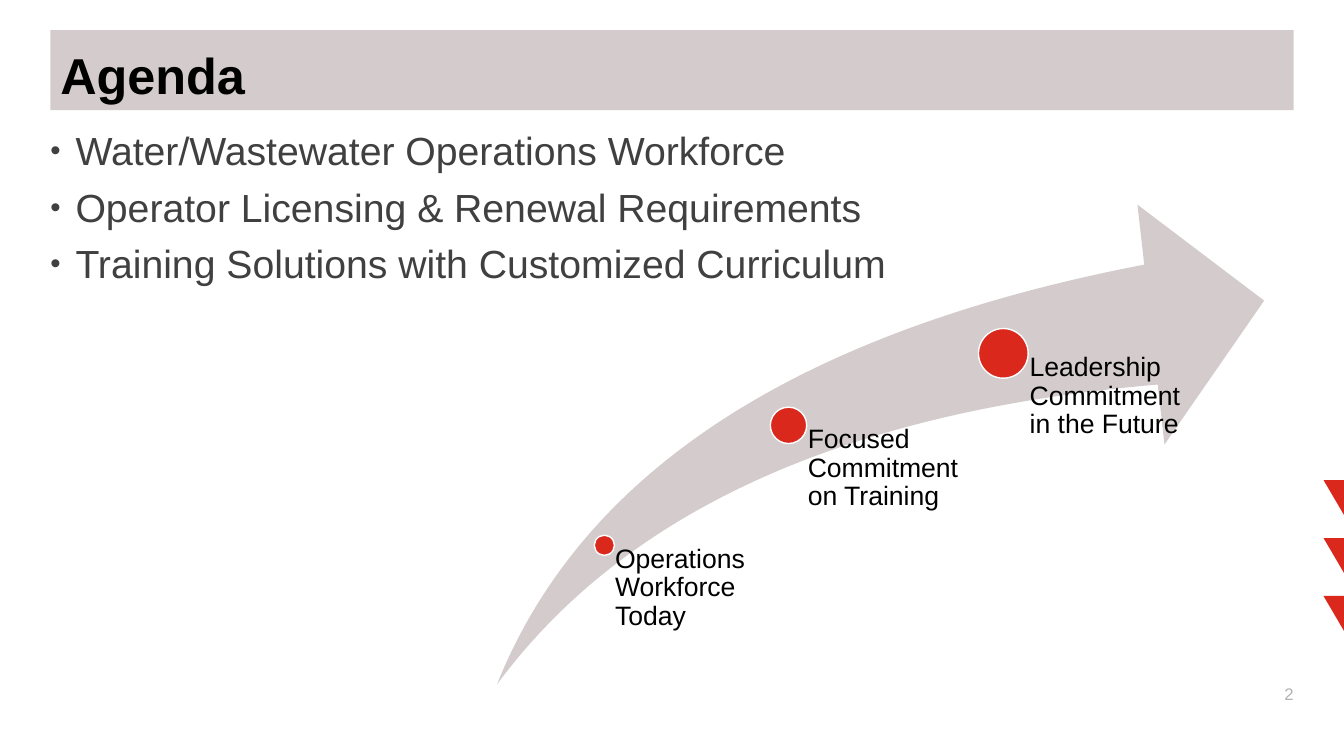
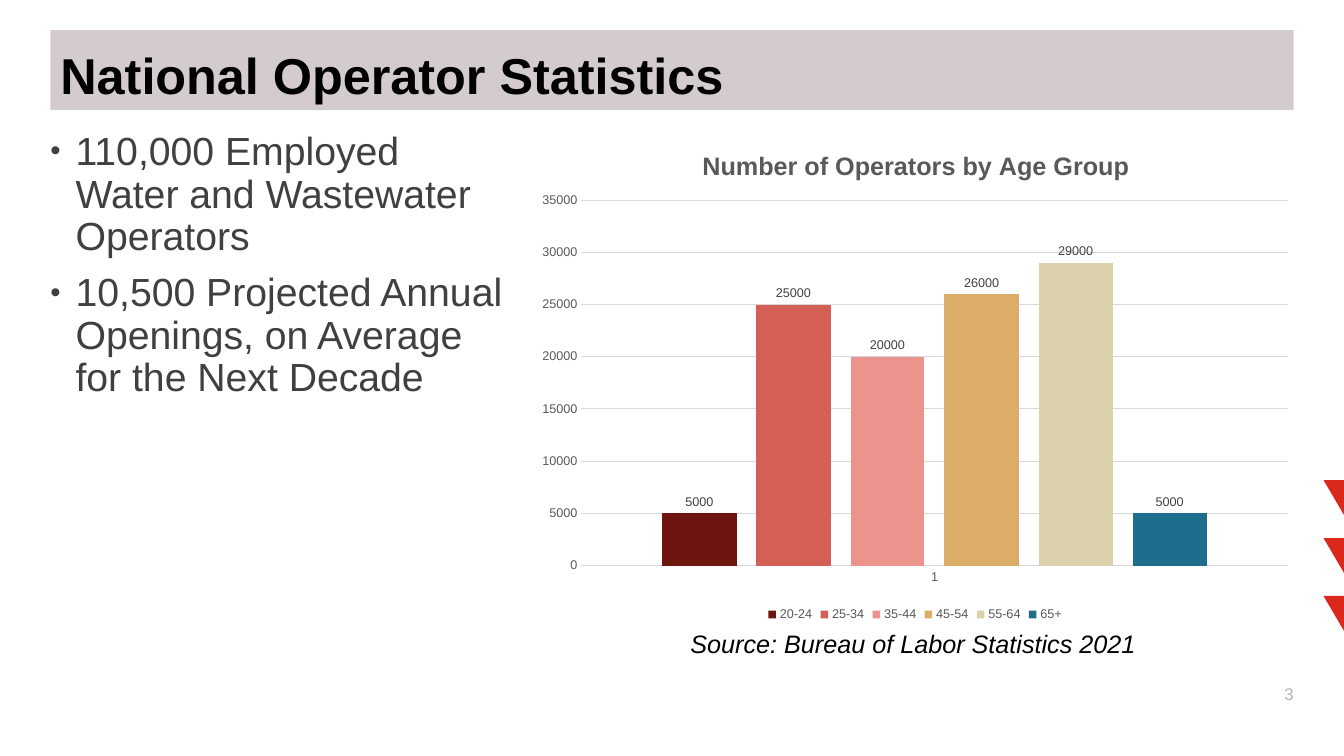
from lxml.etree import SubElement
from pptx import Presentation
from pptx.chart.data import CategoryChartData
from pptx.dml.color import RGBColor
from pptx.enum.chart import XL_CHART_TYPE, XL_LABEL_POSITION, XL_LEGEND_POSITION, XL_TICK_MARK
from pptx.enum.shapes import MSO_SHAPE
from pptx.enum.text import MSO_ANCHOR, PP_ALIGN
from pptx.oxml.ns import qn
from pptx.util import Pt

RED = RGBColor(0xDA, 0x28, 0x1C)
STONE = RGBColor(0xD4, 0xCC, 0xCC)
WHITE = RGBColor(0xFF, 0xFF, 0xFF)
BLACK = RGBColor(0x00, 0x00, 0x00)
BODY_GREY = RGBColor(0x40, 0x40, 0x40)
CHART_GREY = RGBColor(0x59, 0x59, 0x59)
NUMBER_GREY = RGBColor(0xB3, 0xB3, 0xB3)
GRID_GREY = RGBColor(0xD9, 0xD9, 0xD9)

FONT = "Arial"
TITLE_FONT = {"size": Pt(36), "bold": True}
BODY_FONT = {"size": Pt(28)}
NUMBER_FONT = {"size": Pt(12)}
STEP_FONT = {"size": Pt(19)}
SOURCE_FONT = {"size": Pt(18), "italic": True}
CHART_TITLE_FONT = {"size": Pt(18), "bold": True}
CHART_FONT = {"size": Pt(9), "bold": False}
TIGHT = {"line_spacing": 0.9, "alignment": PP_ALIGN.LEFT}
FLUSH = {"margin_left": 0, "margin_top": 0, "margin_right": 0, "margin_bottom": 0}

TITLE_BOX = (36, 21.6, 888, 57)
NUMBER_BOX = (821.5, 474.5, 102.5, 28.8)
TRIANGLES_BOX = (945.4, 342.9, 29.5, 108)
AGENDA_BOX = (36, 94.3, 883.5, 368.6)
STATISTICS_BOX = (36, 94.3, 327.6, 368.6)
ROADMAP_BOX = (355, 146.2, 548, 342.7)
CHART_BOX = (376.5, 89.3, 554.4, 357.8)
SOURCE_BOX = (486, 445, 351.4, 51)

AGENDA = [
    "Water/Wastewater Operations Workforce",
    "Operator Licensing & Renewal Requirements",
    "Training Solutions with Customized Curriculum",
]
STATISTICS = [
    "110,000 Employed Water and Wastewater Operators",
    "10,500 Projected Annual Openings, on Average for the Next Decade",
]
STEPS = [
    ("Operations Workforce Today", 0.14, 0.71, 14.4, 127.5),
    ("Focused Commitment on Training", 0.38, 0.46, 26, 131.8),
    ("Leadership Commitment in the Future", 0.66, 0.31, 35.5, 131.8),
]
AGE_GROUPS = [
    ("20-24", 5000, RGBColor(0x6D, 0x15, 0x0E)),
    ("25-34", 25000, RGBColor(0xD3, 0x5F, 0x55)),
    ("35-44", 20000, RGBColor(0xED, 0x93, 0x8E)),
    ("45-54", 26000, RGBColor(0xDB, 0xAD, 0x69)),
    ("55-64", 29000, RGBColor(0xDB, 0xD2, 0xAD)),
    ("65+", 5000, RGBColor(0x1C, 0x6E, 0x8C)),
]


def apply(target, formats):
    """Set every attribute named in a dict of format values."""
    for name, value in formats.items():
        setattr(target, name, value)


def style_font(font, formats, color):
    """Give a font the deck typeface, its formats and its colour."""
    apply(font, {"name": FONT, **formats})
    font.color.rgb = color


def points(box):
    """Turn a box of plain numbers into point lengths."""
    return [Pt(length) for length in box]


def add_filled(slide, preset, box, fill, outline=None):
    """Add a flat preset shape with an optional thin outline."""
    shape = slide.shapes.add_shape(preset, *points(box))
    shape.shadow.inherit = False
    shape.fill.solid()
    shape.fill.fore_color.rgb = fill
    if outline is None:
        shape.line.fill.background()
    else:
        shape.line.color.rgb = outline
        shape.line.width = Pt(1)
    return shape


def write(frame, text, font, color, frame_formats, paragraph_formats):
    """Fill a text frame with one formatted paragraph."""
    apply(frame, {"word_wrap": True, **frame_formats})
    paragraph = frame.paragraphs[0]
    paragraph.text = text
    apply(paragraph, paragraph_formats)
    style_font(paragraph.runs[0].font, font, color)


def add_text(slide, box, *content):
    """Add a text box holding one formatted paragraph."""
    write(slide.shapes.add_textbox(*points(box)).text_frame, *content)


def add_triangles(slide, box):
    """Stack three downward triangles at equal gaps in the box."""
    left, top, width, height = box
    size = 25.2
    step = (height - size) / 2
    for row in range(3):
        triangle = add_filled(slide, MSO_SHAPE.ISOSCELES_TRIANGLE,
                              (left, top + row * step, width, size), RED)
        triangle.rotation = 180


def add_page(deck, title, number):
    """Add a slide with the shared triangles, title band and number."""
    slide = deck.slides.add_slide(deck.slide_layouts[6])
    add_triangles(slide, TRIANGLES_BOX)
    band = add_filled(slide, MSO_SHAPE.RECTANGLE, TITLE_BOX, STONE)
    bottom = {"vertical_anchor": MSO_ANCHOR.BOTTOM}
    write(band.text_frame, title, TITLE_FONT, BLACK, bottom, TIGHT)
    add_text(slide, NUMBER_BOX, str(number), NUMBER_FONT, NUMBER_GREY,
             {**FLUSH, **bottom}, {**TIGHT, "alignment": PP_ALIGN.RIGHT})
    return slide


def add_bullets(slide, box, lines):
    """Add a bulleted list filling the box."""
    frame = slide.shapes.add_textbox(*points(box)).text_frame
    apply(frame, {"word_wrap": True, **FLUSH})
    for index, line in enumerate(lines):
        paragraph = frame.add_paragraph() if index else frame.paragraphs[0]
        properties = paragraph._p.get_or_add_pPr()
        properties.set("marL", str(Pt(18)))
        properties.set("indent", str(-Pt(18)))
        SubElement(properties, qn("a:buSzPct"), val="75000")
        SubElement(properties, qn("a:buFont"), typeface=FONT)
        SubElement(properties, qn("a:buChar"), char="•")
        apply(paragraph, {**TIGHT, "space_before": Pt(10 if index else 0)})
        run = paragraph.add_run()
        run.text = line
        style_font(run.font, BODY_FONT, BODY_GREY)


def add_roadmap(slide, box):
    """Draw the rising arrow with its growing milestones."""
    left, top, width, height = box
    arrow = add_filled(slide, MSO_SHAPE.SWOOSH_ARROW, box, STONE)
    for index in range(2):
        arrow.adjustments[index] = 0.25
    for label, across, down, diameter, label_width in STEPS:
        x, y = left + across * width, top + down * height
        add_filled(slide, MSO_SHAPE.OVAL,
                   (x - diameter / 2, y - diameter / 2, diameter, diameter), RED, WHITE)
        add_text(slide, (x, y, label_width, top + height - y), label, STEP_FONT, BLACK,
                 {**FLUSH, "margin_left": Pt(0.53 * diameter)}, TIGHT)


def set_layout(parent, index, **values):
    """Place a chart part at fractions of the chart area."""
    for old in parent.findall(qn("c:layout")):
        parent.remove(old)
    layout = SubElement(parent, qn("c:layout"))
    parent.insert(index, layout)
    manual = SubElement(layout, qn("c:manualLayout"))
    for name, value in values.items():
        SubElement(manual, qn(f"c:{name}"), val=str(value))


def add_age_chart(slide, box):
    """Add the column chart of operators by age group."""
    data = CategoryChartData()
    data.categories = ["1"]
    for name, count, _ in AGE_GROUPS:
        data.add_series(name, [count])
    chart = slide.shapes.add_chart(XL_CHART_TYPE.COLUMN_CLUSTERED, *points(box), data).chart
    style_font(chart.font, {"size": Pt(10)}, BLACK)

    chart.has_title = True
    title = chart.chart_title
    write(title.text_frame, "Number of Operators by Age Group",
          CHART_TITLE_FONT, CHART_GREY, {}, {})
    title.include_in_layout = False
    set_layout(title._element, 1, xMode="edge", yMode="edge", x=0.22, y=0.04)
    set_layout(chart._chartSpace.chart.plotArea, 0, layoutTarget="inner",
               xMode="edge", yMode="edge", x=0.07, y=0.15, w=0.91, h=0.73)

    chart.has_legend = True
    apply(chart.legend, {"position": XL_LEGEND_POSITION.BOTTOM, "include_in_layout": False})
    style_font(chart.legend.font, CHART_FONT, CHART_GREY)

    for axis in (chart.category_axis, chart.value_axis):
        apply(axis, {"major_tick_mark": XL_TICK_MARK.NONE, "minor_tick_mark": XL_TICK_MARK.NONE})
        style_font(axis.tick_labels.font, CHART_FONT, CHART_GREY)
    apply(chart.value_axis, {"minimum_scale": 0, "maximum_scale": 35000, "major_unit": 5000,
                             "has_major_gridlines": True})
    chart.value_axis.format.line.fill.background()
    for line in (chart.category_axis.format.line, chart.value_axis.major_gridlines.format.line):
        line.color.rgb = GRID_GREY
        line.width = Pt(0.75)

    plot = chart.plots[0]
    apply(plot, {"gap_width": 219, "overlap": -27, "vary_by_categories": False})
    for series, (_, _, color) in zip(plot.series, AGE_GROUPS):
        series.format.fill.solid()
        series.format.fill.fore_color.rgb = color
        labels = series.data_labels
        apply(labels, {"show_value": True, "position": XL_LABEL_POSITION.OUTSIDE_END})
        style_font(labels.font, CHART_FONT, BODY_GREY)


def build_agenda(deck):
    """Build the agenda slide."""
    slide = add_page(deck, "Agenda", 2)
    add_bullets(slide, AGENDA_BOX, AGENDA)
    add_roadmap(slide, ROADMAP_BOX)


def build_statistics(deck):
    """Build the operator statistics slide."""
    slide = add_page(deck, "National Operator Statistics", 3)
    add_bullets(slide, STATISTICS_BOX, STATISTICS)
    add_text(slide, SOURCE_BOX, "Source: Bureau of Labor Statistics 2021",
             SOURCE_FONT, BLACK, {}, {})
    add_age_chart(slide, CHART_BOX)


def main():
    """Build and save the deck."""
    deck = Presentation()
    apply(deck, {"slide_width": Pt(960), "slide_height": Pt(540)})
    build_agenda(deck)
    build_statistics(deck)
    deck.save("out.pptx")


if __name__ == "__main__":
    main()
